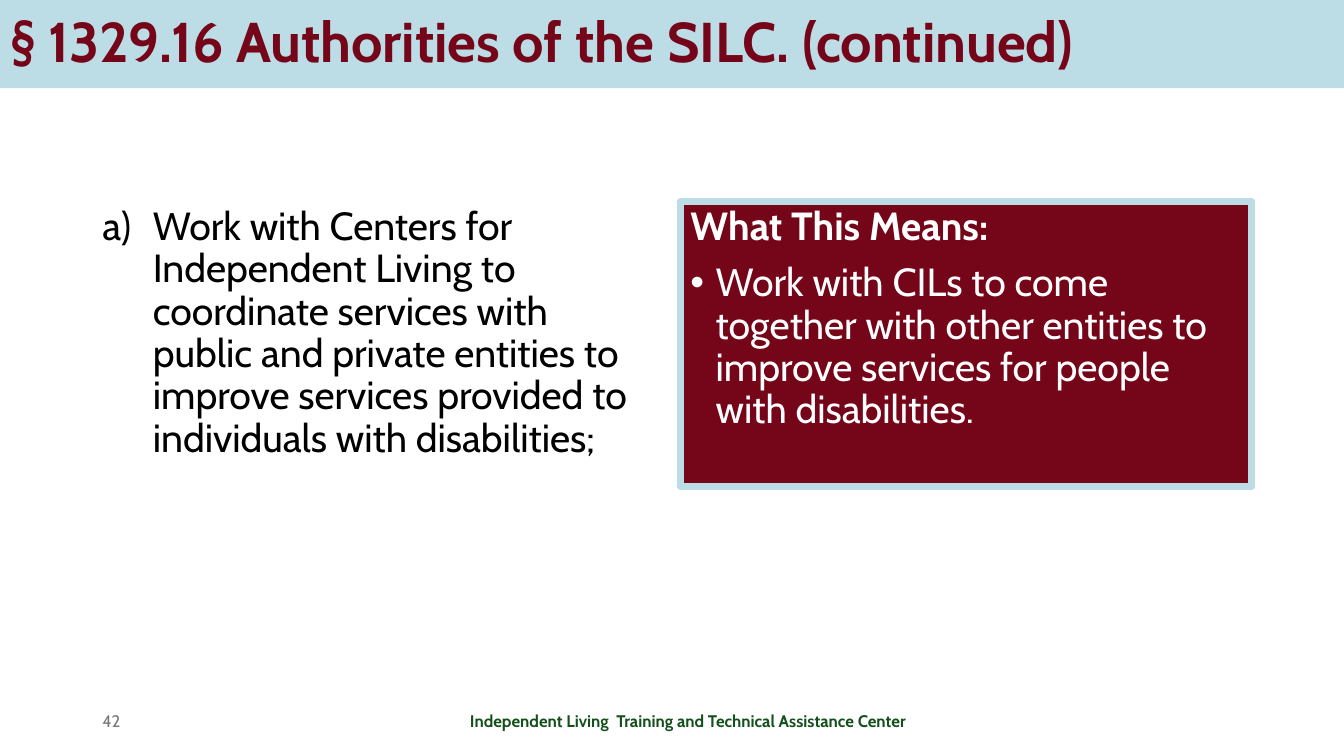
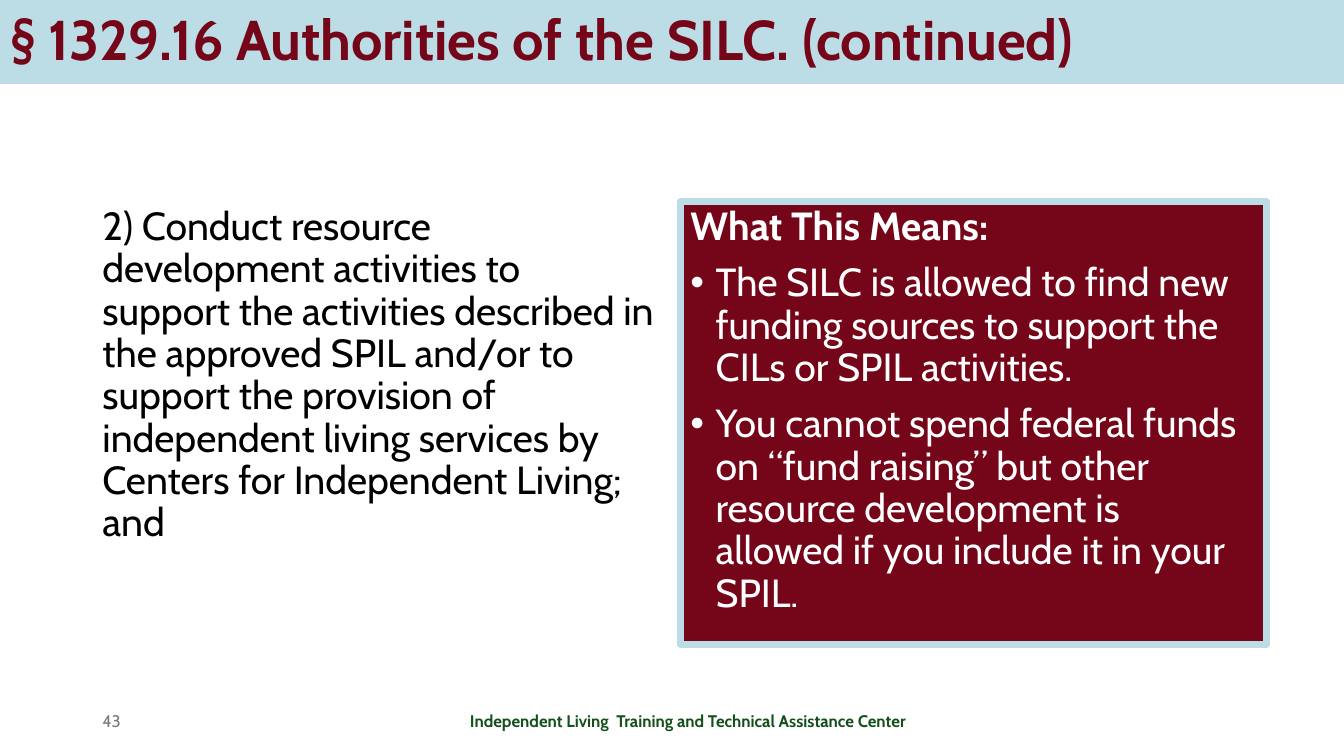
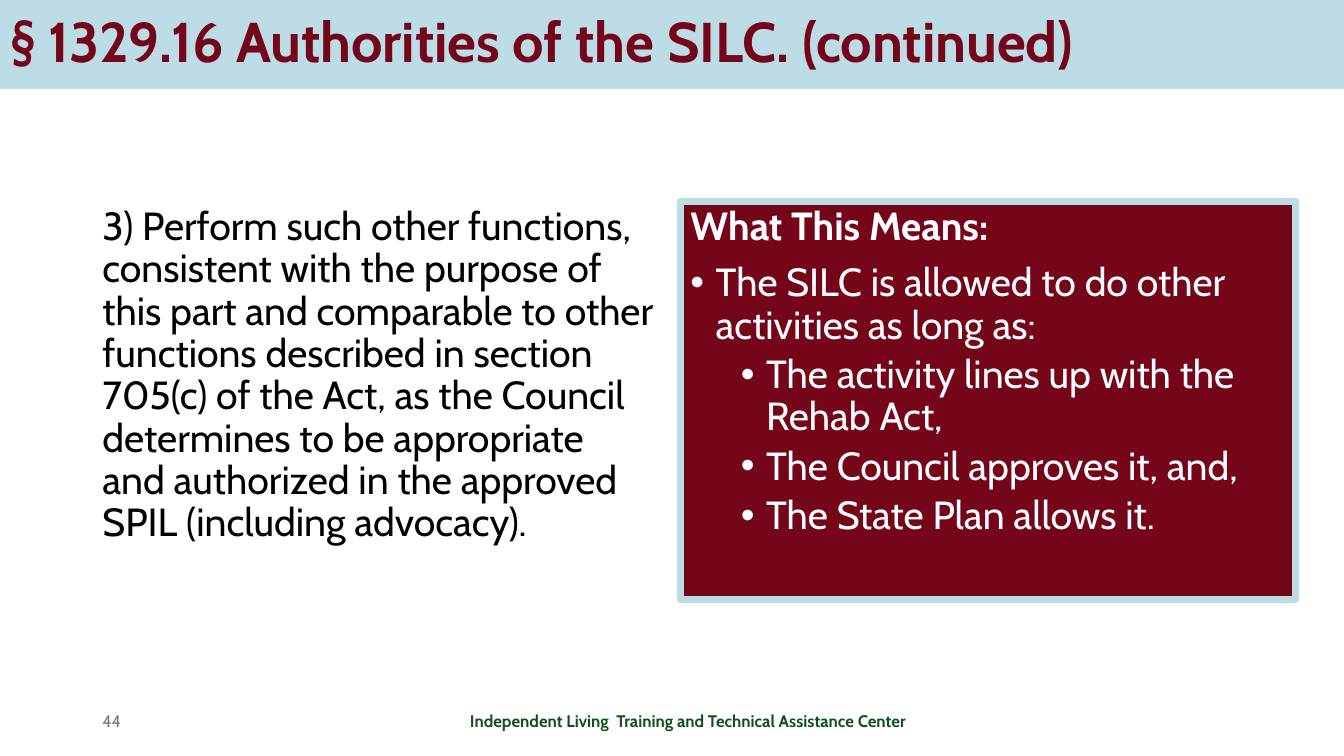
"""Build three slides on the authorities of the SILC, each pairing a rule with its meaning."""
from dataclasses import dataclass

from lxml import etree
from pptx import Presentation
from pptx.dml.color import RGBColor
from pptx.enum.text import MSO_ANCHOR, MSO_AUTO_SIZE, PP_ALIGN
from pptx.oxml.ns import qn
from pptx.util import Pt

LEFT, CENTER = PP_ALIGN.LEFT, PP_ALIGN.CENTER
TOP, MIDDLE = MSO_ANCHOR.TOP, MSO_ANCHOR.MIDDLE
NO_FIT = MSO_AUTO_SIZE.NONE
PX = 9525


@dataclass(frozen=True)
class Theme:
    font: str = "Cabin"
    maroon: str = "750518"
    pale_blue: str = "BCDDE6"
    white: str = "FFFFFF"
    black: str = "000000"
    gray: str = "797979"
    green: str = "13501B"
    title_size: int = 40
    body_size: int = 28
    footer_size: int = 12
    border: int = 5


THEME = Theme()
TITLE = "§ 1329.16 Authorities of the SILC. (continued)"
MEANING_HEADING = "What This Means:"
FOOTER = "Independent Living  Training and Technical Assistance Center"
FIRST_NUMBER = 42
COLUMN_TOP = 192
FOOTER_TOP, FOOTER_HEIGHT = 667, 38
BULLET = ("buChar", {"char": "•"})
LETTER = ("buAutoNum", {"type": "alphaLcParenR"})
NO_MARK = ("buNone", {})

SLIDES = [
    {
        "band": 84,
        "rule": "Work with Centers for Independent Living to coordinate services with public "
                "and private entities to improve services provided to individuals with disabilities;",
        "rule_format": {"mark": LETTER, "margin": 48, "hang": 48},
        "panel": (544, 271),
        "meaning": [
            (0, "Work with CILs to come together with other entities to improve services "
                "for people with disabilities."),
        ],
    },
    {
        "band": 80,
        "rule": "2) Conduct resource development activities to support the activities described "
                "in the approved SPIL and/or to support the provision of independent living "
                "services by Centers for Independent Living; and",
        "rule_format": {},
        "panel": (558, 422),
        "meaning": [
            (0, "The SILC is allowed to find new funding sources to support the CILs or "
                "SPIL activities."),
            (0, "You cannot spend federal funds on “fund raising” but other resource "
                "development is allowed if you include it in your SPIL."),
        ],
    },
    {
        "band": 85,
        "rule": "3) Perform such other functions, consistent with the purpose of this part and "
                "comparable to other functions described in section 705(c) of the Act, as the "
                "Council determines to be appropriate and authorized in the approved SPIL "
                "(including advocacy).",
        "rule_format": {},
        "panel": (586, 379),
        "meaning": [
            (0, "The SILC is allowed to do other activities as long as:"),
            (1, "The activity lines up with the Rehab Act,"),
            (1, "The Council approves it, and,"),
            (1, "The State Plan allows it."),
        ],
    },
]


def place(shape, left, top, width, height, anchor=TOP):
    """Move a text shape to a pixel box and return its text frame."""
    shape.left, shape.top = left * PX, top * PX
    shape.width, shape.height = width * PX, height * PX
    frame = shape.text_frame
    frame.word_wrap = True
    frame.auto_size = NO_FIT
    frame.vertical_anchor = anchor
    return frame


def write(frame, text, size=THEME.body_size, color=THEME.black, bold=False, align=LEFT,
          spacing=0.9, before=0, level=0, mark=NO_MARK, margin=0, hang=0):
    """Add one formatted paragraph, using the empty first one when there is one."""
    paragraph = frame.add_paragraph() if frame.text else frame.paragraphs[0]
    paragraph.level = level
    paragraph.alignment = align
    paragraph.line_spacing = spacing
    paragraph.space_before = Pt(before)
    properties = paragraph._p.get_or_add_pPr()
    properties.set("marL", str(margin * PX))
    properties.set("indent", str(-hang * PX))
    tag, attributes = mark
    etree.SubElement(properties, qn("a:" + tag), attributes)
    run = paragraph.add_run()
    run.text = text
    run.font.name = THEME.font
    run.font.size = Pt(size)
    run.font.bold = bold
    run.font.color.rgb = RGBColor.from_string(color)


deck = Presentation()
deck.slide_width, deck.slide_height = 1280 * PX, 720 * PX
two_content = deck.slide_layouts[3]

for number, content in enumerate(SLIDES, FIRST_NUMBER):
    slide = deck.slides.add_slide(two_content)
    title, rule, panel = slide.placeholders

    title.fill.solid()
    title.fill.fore_color.rgb = RGBColor.from_string(THEME.pale_blue)
    write(place(title, 0, 0, 1280, content["band"], MIDDLE), TITLE,
          size=THEME.title_size, color=THEME.maroon, bold=True)

    write(place(rule, 88, COLUMN_TOP, 544, 457), content["rule"], **content["rule_format"])

    panel.fill.solid()
    panel.fill.fore_color.rgb = RGBColor.from_string(THEME.maroon)
    panel.line.color.rgb = RGBColor.from_string(THEME.pale_blue)
    panel.line.width = Pt(THEME.border)
    meaning = place(panel, 648, COLUMN_TOP, *content["panel"])
    write(meaning, MEANING_HEADING, color=THEME.white, bold=True)
    for level, point in content["meaning"]:
        write(meaning, point, color=THEME.white, before=5 if level else 10, level=level,
              mark=BULLET, margin=24 + 48 * level, hang=24)

    page_number = slide.shapes.add_textbox(0, 0, 0, 0)
    write(place(page_number, 88, FOOTER_TOP, 288, FOOTER_HEIGHT, MIDDLE), str(number),
          size=THEME.footer_size, color=THEME.gray, spacing=1.0)
    footer = slide.shapes.add_textbox(0, 0, 0, 0)
    write(place(footer, 424, FOOTER_TOP, 463, FOOTER_HEIGHT, MIDDLE), FOOTER,
          size=THEME.footer_size, color=THEME.green, bold=True, align=CENTER, spacing=1.0)

deck.save("out.pptx")
